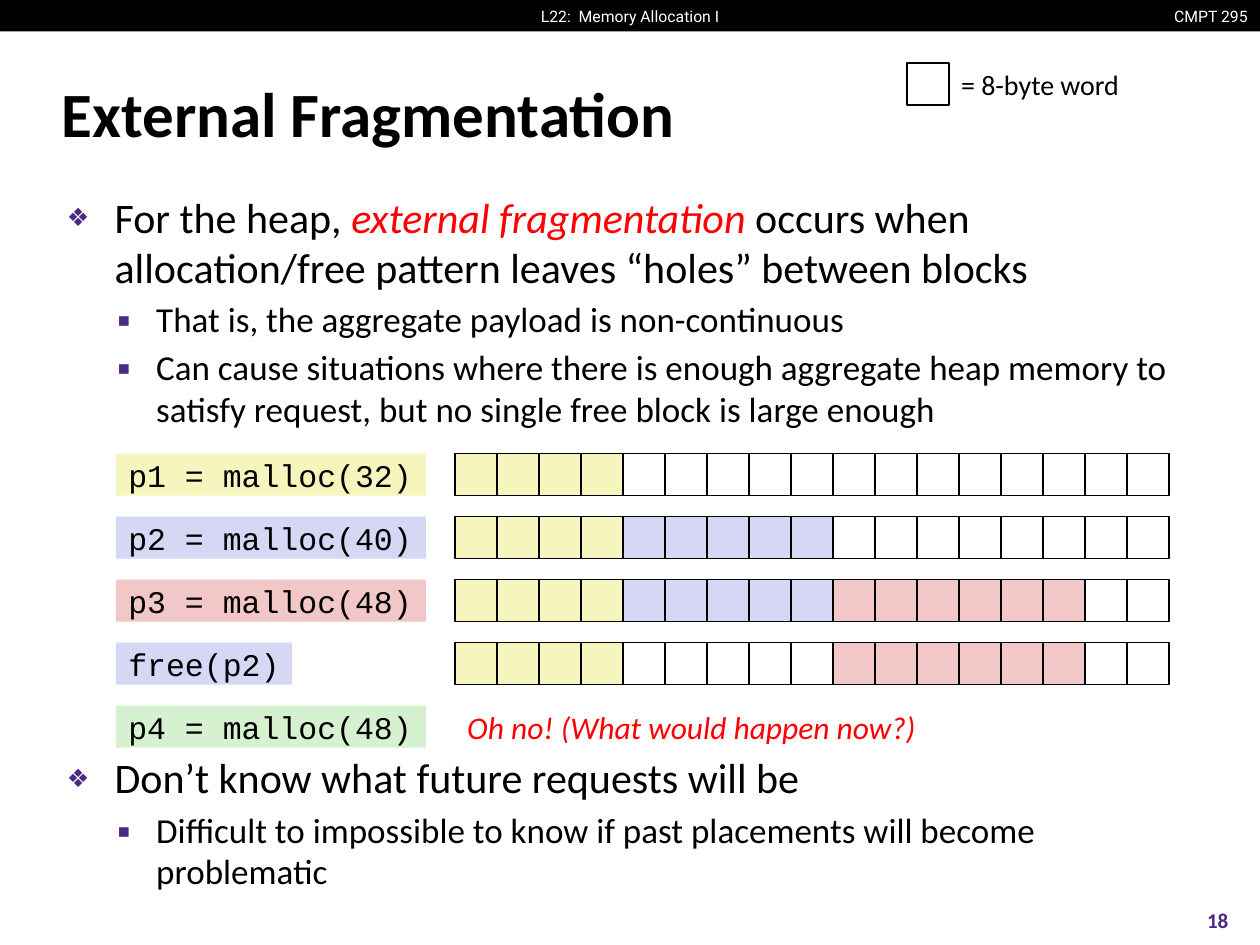
"""Build the External Fragmentation slide."""
import dataclasses
import typing

import pptx
import pptx.dml.color
import pptx.enum.shapes
import pptx.enum.text
import pptx.oxml
import pptx.oxml.ns
import pptx.util

Inches = pptx.util.Inches
Pt = pptx.util.Pt
RGB = pptx.dml.color.RGBColor
Align = pptx.enum.text.PP_ALIGN
Anchor = pptx.enum.text.MSO_ANCHOR

BLACK = RGB(0x00, 0x00, 0x00)
WHITE = RGB(0xFF, 0xFF, 0xFF)
RED = RGB(0xFF, 0x00, 0x00)
PURPLE = RGB(0x4B, 0x2A, 0x85)
YELLOW = RGB(0xF6, 0xF5, 0xBD)
BLUE = RGB(0xD6, 0xD6, 0xF5)
PINK = RGB(0xF1, 0xC7, 0xC7)
GREEN = RGB(0xD5, 0xF1, 0xCF)

CELL = 1 / 3
HEAP_X = 3.61
CODE_X = 0.92
TOP = 3.6
STEP = 0.5

HEAD = {"name": "Roboto", "size": Pt(9)}
TITLE = {"name": "Calibri", "size": Pt(36), "bold": True}
CODE = {"name": "Courier New", "size": Pt(18)}
NOTE = {"name": "Calibri", "size": Pt(18), "italic": True}
KEY = {"name": "Calibri", "size": Pt(16)}
PAGE = {"name": "Calibri", "size": Pt(12), "bold": True}
FRAME = {"word_wrap": False, "vertical_anchor": Anchor.MIDDLE,
         "margin_top": 0, "margin_bottom": 0,
         "margin_left": Inches(0.1), "margin_right": Inches(0.1)}


@dataclasses.dataclass
class Call:
    """A heap call and the cell runs that it leaves."""
    text: str
    fill: RGB
    width: float = 2.46
    runs: tuple = ()


@dataclasses.dataclass
class Level:
    """The look of one list level."""
    size: int
    left: float
    hang: float
    mark: str
    scale: int
    space: float


@dataclasses.dataclass
class Item:
    """A list entry, with coloured bits and the space before it."""
    level: int
    bits: tuple
    space: typing.Optional[float] = None


CALLS = (
    Call("p1 = malloc(32)", YELLOW, runs=((YELLOW, 4), (WHITE, 13))),
    Call("p2 = malloc(40)", BLUE, runs=((YELLOW, 4), (BLUE, 5), (WHITE, 8))),
    Call("p3 = malloc(48)", PINK,
         runs=((YELLOW, 4), (BLUE, 5), (PINK, 6), (WHITE, 2))),
    Call("free(p2)", BLUE, 1.4,
         ((YELLOW, 4), (WHITE, 5), (PINK, 6), (WHITE, 2))),
    Call("p4 = malloc(48)", GREEN),
)
LEVELS = (Level(24, 0.38, 0.38, "❖", 60, 4.8),
          Level(20, 0.71, 0.31, "▪", 110, 4))
ITEMS = (
    Item(0, (("For the heap, ", BLACK), ("external fragmentation ", RED),
             ("occurs when allocation/free pattern leaves “holes” "
              "between blocks", BLACK)), 0),
    Item(1, (("That is, the aggregate payload is non-continuous", BLACK),)),
    Item(1, (("Can cause situations where there is enough aggregate heap "
              "memory to satisfy request, but no single free block is "
              "large enough", BLACK),)),
    Item(0, (("Don’t know what future requests will be", BLACK),), 185),
    Item(1, (("Difficult to impossible to know if past placements will "
              "become problematic", BLACK),)),
)


def apply(target: typing.Any, look: dict) -> None:
    """Set each value in look on the target."""
    for name, value in look.items():
        setattr(target, name, value)


def place(shape: typing.Any, *spot: float) -> None:
    """Move and size a shape in inches."""
    names = ("left", "top", "width", "height")
    apply(shape, dict(zip(names, map(Inches, spot))))


def write(shape: typing.Any, text: str, look: dict, color: RGB = BLACK,
          align: Align = Align.LEFT) -> None:
    """Put one styled line in a shape."""
    apply(shape.text_frame, FRAME)
    line = shape.text_frame.paragraphs[0]
    line.alignment = align
    run = line.add_run()
    run.text = text
    apply(run.font, look)
    run.font.color.rgb = color


def box(slide: typing.Any, spot: tuple, fill: RGB,
        edge: bool = False) -> typing.Any:
    """Draw a filled rectangle."""
    kind = pptx.enum.shapes.MSO_SHAPE.RECTANGLE
    shape = slide.shapes.add_shape(kind, *map(Inches, spot))
    shape.shadow.inherit = False
    shape.fill.solid()
    shape.fill.fore_color.rgb = fill
    if edge:
        shape.line.color.rgb = BLACK
        shape.line.width = Pt(1)
    else:
        shape.line.fill.background()
    return shape


def label(slide: typing.Any, spot: tuple, *words: typing.Any) -> None:
    """Add a text box with one styled line."""
    write(slide.shapes.add_textbox(*map(Inches, spot)), *words)


def bullet(line: typing.Any, level: Level) -> None:
    """Give a paragraph its indent and mark."""
    props = line._p.get_or_add_pPr()
    props.set("marL", str(Inches(level.left)))
    props.set("indent", str(-Inches(level.hang)))
    space = pptx.oxml.ns.nsdecls("a")
    for body in (f'<a:buClr {space}><a:srgbClr val="{PURPLE}"/></a:buClr>',
                 f'<a:buSzPct {space} val="{level.scale * 1000}"/>',
                 f'<a:buFont {space} typeface="Arial"/>',
                 f'<a:buChar {space} char="{level.mark}"/>'):
        props.append(pptx.oxml.parse_xml(body))


def fill_list(frame: typing.Any) -> None:
    """Write the list items into the body."""
    frame.auto_size = pptx.enum.text.MSO_AUTO_SIZE.NONE
    for pos, item in enumerate(ITEMS):
        line = frame.add_paragraph() if pos else frame.paragraphs[0]
        level = LEVELS[item.level]
        space = level.space if item.space is None else item.space
        apply(line, {"level": item.level, "line_spacing": 0.98,
                     "space_before": Pt(space)})
        bullet(line, level)
        for text, color in item.bits:
            run = line.add_run()
            run.text = text
            apply(run.font, {"name": "Calibri", "size": Pt(level.size),
                             "italic": color == RED})
            run.font.color.rgb = color


def draw_call(slide: typing.Any, call: Call, top: float) -> None:
    """Draw one call and its heap row."""
    fills = [fill for fill, count in call.runs for _ in range(count)]
    for col, fill in enumerate(fills):
        box(slide, (HEAP_X + col * CELL, top, CELL, CELL), fill, True)
    tag = box(slide, (CODE_X, top, call.width, CELL), call.fill)
    write(tag, call.text, CODE)


def main() -> None:
    """Build and save the slide."""
    deck = pptx.Presentation()
    deck.slide_width, deck.slide_height = Inches(10), Inches(7.5)
    slide = deck.slides.add_slide(deck.slide_layouts[1])
    title, body = slide.placeholders
    place(title, 0.39, 0.48, 9.19, 0.83)
    write(title, "External Fragmentation", TITLE)
    place(body, 0.43, 1.49, 9.15, 5.44)
    fill_list(body.text_frame)

    bar = box(slide, (0, 0, 10, 0.25), BLACK)
    write(bar, "L22:  Memory Allocation I", HEAD, WHITE, Align.CENTER)
    label(slide, (9.19, 0, 0.81, 0.25), "CMPT 295", HEAD, WHITE, Align.RIGHT)
    label(slide, (9.33, 7.1, 0.67, 0.4), "18", PAGE, PURPLE, Align.CENTER)

    for row, call in enumerate(CALLS):
        draw_call(slide, call, TOP + row * STEP)
    label(slide, (HEAP_X, TOP + 4 * STEP, 4.31, CELL),
          "Oh no! (What would happen now?)", NOTE, RED)
    box(slide, (7.2, 0.5, CELL, CELL), WHITE, True)
    label(slide, (7.53, 0.5, 1.47, CELL), "= 8-byte word", KEY)
    deck.save("out.pptx")


if __name__ == "__main__":
    main()
